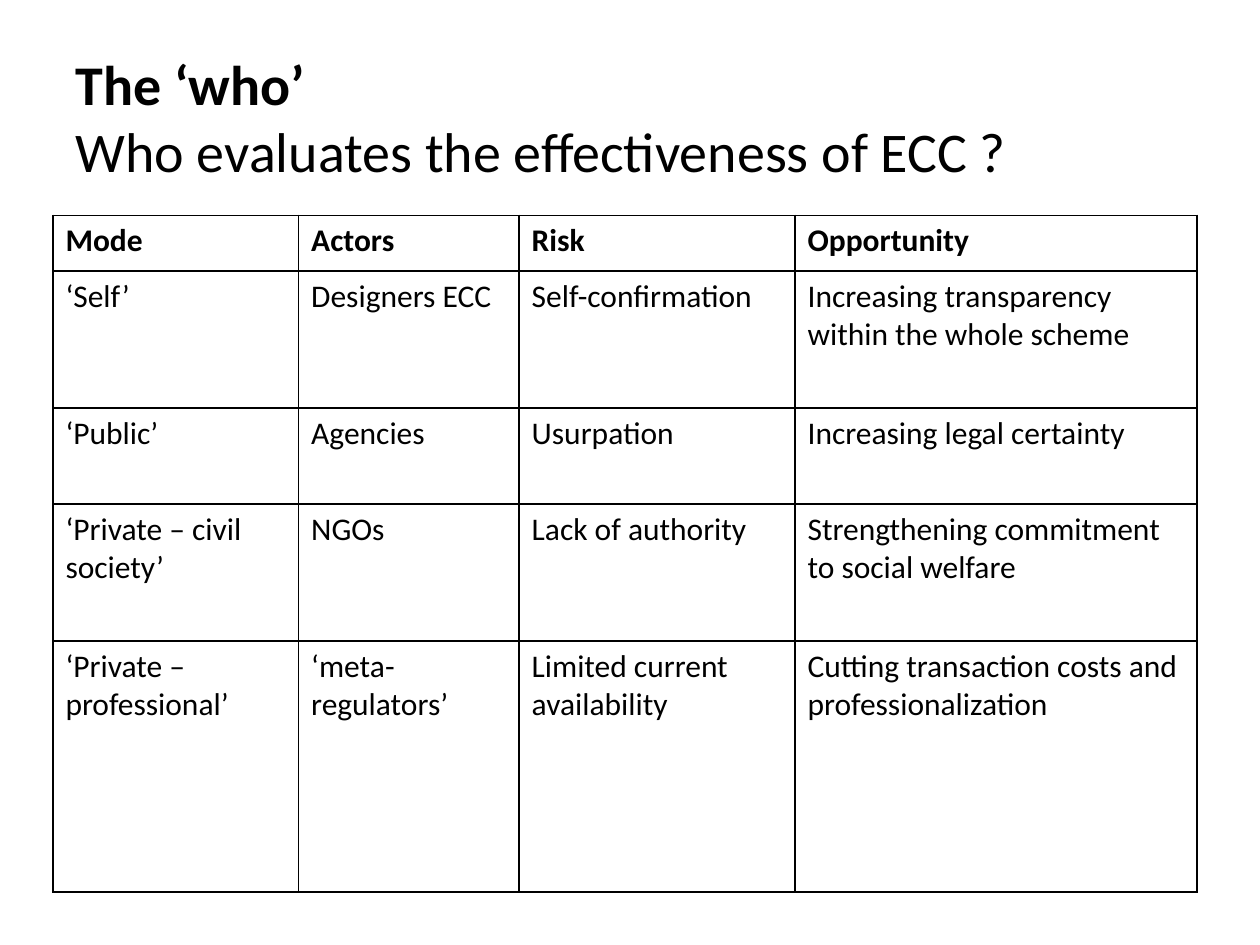
from dataclasses import dataclass

from lxml import etree
from pptx import Presentation
from pptx.dml.color import RGBColor
from pptx.enum import text
from pptx.oxml import ns
from pptx.slide import Slide
from pptx.table import _Cell
from pptx.util import Inches, Pt

BLACK = RGBColor(0, 0, 0)
WHITE = RGBColor(255, 255, 255)
FONT = "Calibri"
WIDTHS = (1.95, 1.75, 2.19, 3.19)


@dataclass
class Row:
    height: float
    texts: tuple[str, str, str, str]
    bold: bool = False


ROWS = [
    Row(0.44, ("Mode", "Actors", "Risk", "Opportunity"), True),
    Row(1.09, ("‘Self’", "Designers ECC", "Self-confirmation",
               "Increasing transparency within the whole scheme")),
    Row(0.76, ("‘Public’", "Agencies", "Usurpation",
               "Increasing legal certainty")),
    Row(1.09, ("‘Private – civil society’", "NGOs", "Lack of authority",
               "Strengthening commitment to social welfare")),
    Row(1.99, ("‘Private – professional’", "‘meta-regulators’",
               "Limited current availability",
               "Cutting transaction costs and professionalization")),
]


def add_title(slide: Slide) -> None:
    title = slide.shapes.title
    title.left, title.top = Inches(0.5), Inches(0.3)
    title.width, title.height = Inches(9), Inches(1.25)
    frame = title.text_frame
    frame.word_wrap = True
    frame.auto_size = text.MSO_AUTO_SIZE.NONE
    frame.vertical_anchor = text.MSO_ANCHOR.MIDDLE
    para = frame.paragraphs[0]
    para.alignment = text.PP_ALIGN.LEFT
    head = para.add_run()
    head.text = "The ‘who’ "
    para.add_line_break()
    tail = para.add_run()
    tail.text = "Who evaluates the effectiveness of ECC ?"
    for run, bold in ((head, True), (tail, False)):
        run.font.name = FONT
        run.font.size = Pt(32)
        run.font.bold = bold
        run.font.color.rgb = BLACK


def add_border(cell: _Cell) -> None:
    props = cell._tc.get_or_add_tcPr()
    for side in ("lnL", "lnR", "lnT", "lnB"):
        line = etree.SubElement(props, ns.qn(f"a:{side}"), w=str(Pt(1)))
        fill = etree.SubElement(line, ns.qn("a:solidFill"))
        etree.SubElement(fill, ns.qn("a:srgbClr"), val=str(BLACK))


def fill_cell(cell: _Cell, words: str, bold: bool) -> None:
    add_border(cell)
    cell.fill.solid()
    cell.fill.fore_color.rgb = WHITE
    cell.text = words
    font = cell.text_frame.paragraphs[0].font
    font.name = FONT
    font.size = Pt(18)
    font.bold = bold
    font.color.rgb = BLACK


def add_grid(slide: Slide) -> None:
    high = sum(row.height for row in ROWS)
    table = slide.shapes.add_table(
        len(ROWS), len(WIDTHS), Inches(0.42), Inches(1.71),
        Inches(sum(WIDTHS)), Inches(high)).table
    table.horz_banding = False
    for col, width in zip(table.columns, WIDTHS):
        col.width = Inches(width)
    for line, row in zip(table.rows, ROWS):
        line.height = Inches(row.height)
        for cell, words in zip(line.cells, row.texts):
            fill_cell(cell, words, row.bold)


def main() -> None:
    deck = Presentation()
    deck.slide_width, deck.slide_height = Inches(10), Inches(7.5)
    slide = deck.slides.add_slide(deck.slide_layouts.get_by_name("Title Only"))
    add_title(slide)
    add_grid(slide)
    deck.save("out.pptx")


if __name__ == "__main__":
    main()
